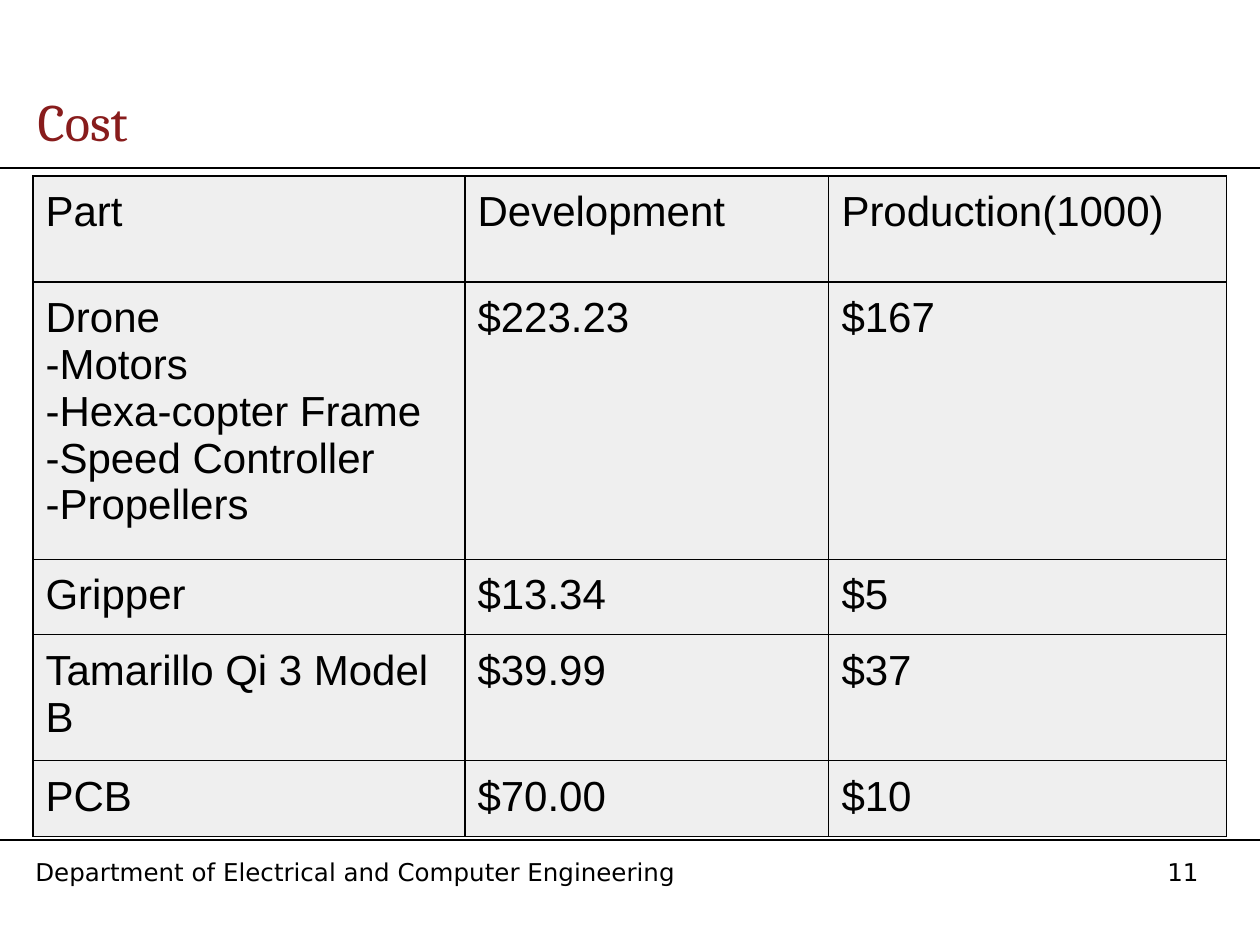
from lxml.etree import SubElement
from pptx import Presentation
from pptx.dml.color import RGBColor
from pptx.enum.shapes import MSO_CONNECTOR
from pptx.enum.text import MSO_ANCHOR, MSO_AUTO_SIZE, PP_ALIGN
from pptx.oxml.ns import qn
from pptx.util import Emu, Inches, Pt

# Content
TITLE = "Cost"
DEPARTMENT = "Department of Electrical and Computer Engineering"
PAGE_NUMBER = "11"
COSTS = [
    ("Part", "Development", "Production(1000)"),
    ("Drone\n-Motors\n-Hexa-copter Frame\n-Speed Controller\n-Propellers", "$223.23", "$167"),
    ("Gripper", "$13.34", "$5"),
    ("Tamarillo Qi 3 Model B", "$39.99", "$37"),
    ("PCB", "$70.00", "$10"),
]

# Layout in px
PAGE_WIDTH, PAGE_HEIGHT = 1260, 945
TITLE_BOX = (25, 0, 1065, 242)
TABLE_LEFT, TABLE_TOP = 33, 176
COLUMN_WIDTHS = (432, 364, 398)
ROW_HEIGHTS = (106, 259, 72, 119, 72)
RULE_TOPS = (168, 840)
FOOTERS = [
    (DEPARTMENT, (23, 851, 665, 42)),
    (PAGE_NUMBER, (1155, 851, 84, 42)),
]

BLACK = RGBColor(0x00, 0x00, 0x00)
MAROON = RGBColor(0x88, 0x1C, 0x1C)
CELL_GREY = RGBColor(0xEF, 0xEF, 0xEF)
MARGIN = Inches(0.1)


def px(length):
    return Emu(round(length * 914400 / 126))


def style_paragraphs(frame, name, size, color):
    for para in frame.paragraphs:
        para.alignment = PP_ALIGN.LEFT
        para.font.name = name
        para.font.size = Pt(size)
        para.font.color.rgb = color


def add_borders(cell):
    properties = cell._tc.get_or_add_tcPr()
    for position, side in enumerate(("a:lnL", "a:lnR", "a:lnT", "a:lnB")):
        border = SubElement(properties, qn(side), w=str(Pt(0.75)))
        fill = SubElement(border, qn("a:solidFill"))
        SubElement(fill, qn("a:srgbClr"), val=str(BLACK))
        properties.insert(position, border)


deck = Presentation()
deck.slide_width, deck.slide_height = px(PAGE_WIDTH), px(PAGE_HEIGHT)
page = deck.slides.add_slide(deck.slide_layouts[5])

# Title
title = page.shapes.title
title.left, title.top, title.width, title.height = map(px, TITLE_BOX)
frame = title.text_frame
frame.text = TITLE
frame.auto_size = MSO_AUTO_SIZE.NONE
frame.vertical_anchor = MSO_ANCHOR.MIDDLE
frame.margin_left = frame.margin_right = frame.margin_top = frame.margin_bottom = MARGIN
style_paragraphs(frame, "Cambria", 30, MAROON)

# Rules above and below the table
for top in RULE_TOPS:
    rule = page.shapes.add_connector(MSO_CONNECTOR.STRAIGHT, 0, px(top), px(PAGE_WIDTH), px(top))
    rule.line.color.rgb = BLACK
    rule.line.width = Pt(1)
    SubElement(rule._element.spPr, qn("a:effectLst"))

# Footer
for text, bounds in FOOTERS:
    box = page.shapes.add_textbox(*map(px, bounds))
    box.text_frame.word_wrap = True
    box.text_frame.text = text
    style_paragraphs(box.text_frame, "DejaVu Sans", 14, BLACK)

# Cost table
table = page.shapes.add_table(
    len(COSTS), len(COLUMN_WIDTHS), px(TABLE_LEFT), px(TABLE_TOP),
    px(sum(COLUMN_WIDTHS)), px(sum(ROW_HEIGHTS)),
).table
table.first_row = table.horz_banding = False
for column, width in zip(table.columns, COLUMN_WIDTHS):
    column.width = px(width)
for row, height, texts in zip(table.rows, ROW_HEIGHTS, COSTS):
    row.height = px(height)
    for cell, text in zip(row.cells, texts):
        cell.text = text
        cell.margin_left = cell.margin_right = cell.margin_top = cell.margin_bottom = MARGIN
        cell.fill.solid()
        cell.fill.fore_color.rgb = CELL_GREY
        add_borders(cell)
        style_paragraphs(cell.text_frame, "Arial", 24, BLACK)

deck.save("out.pptx")
